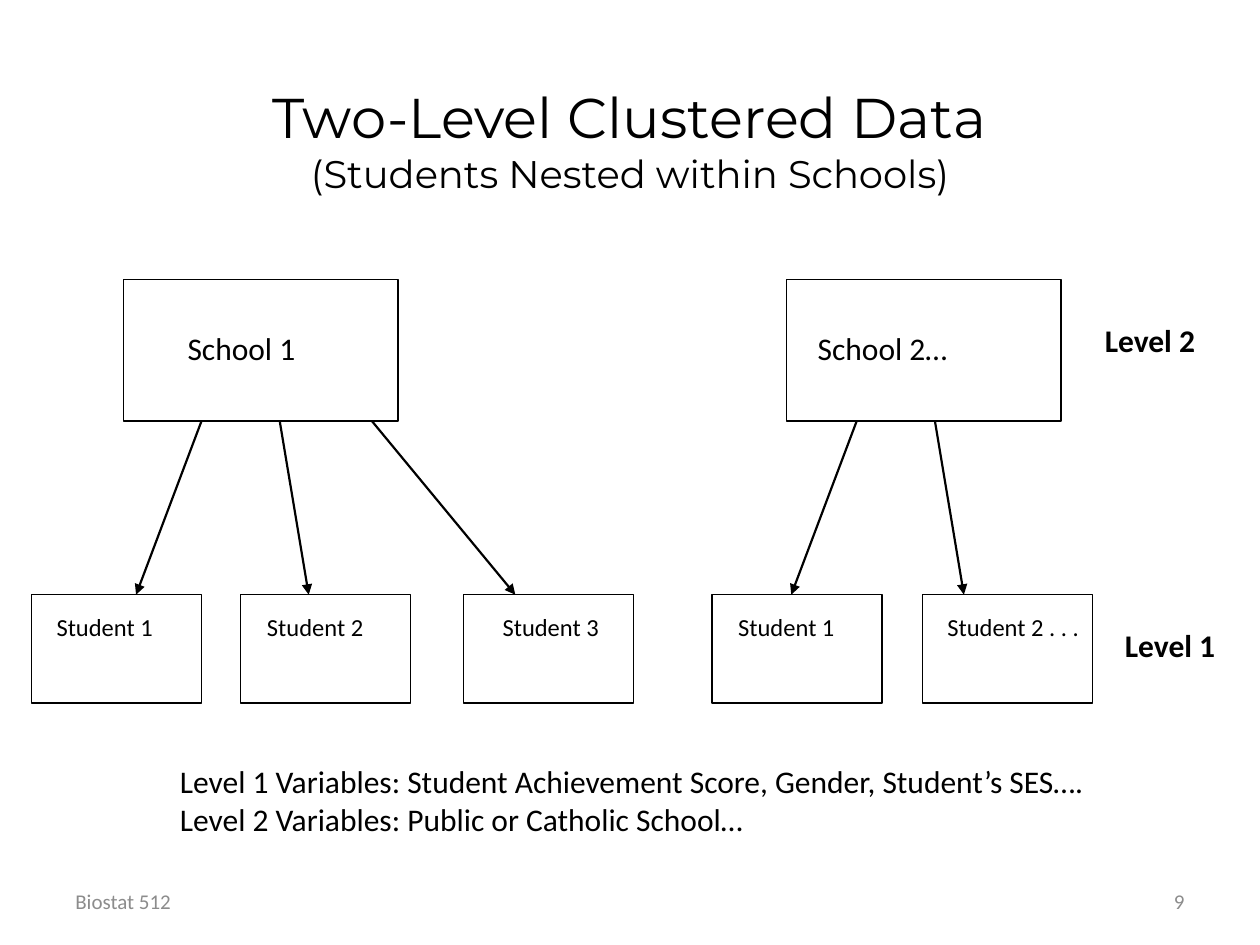
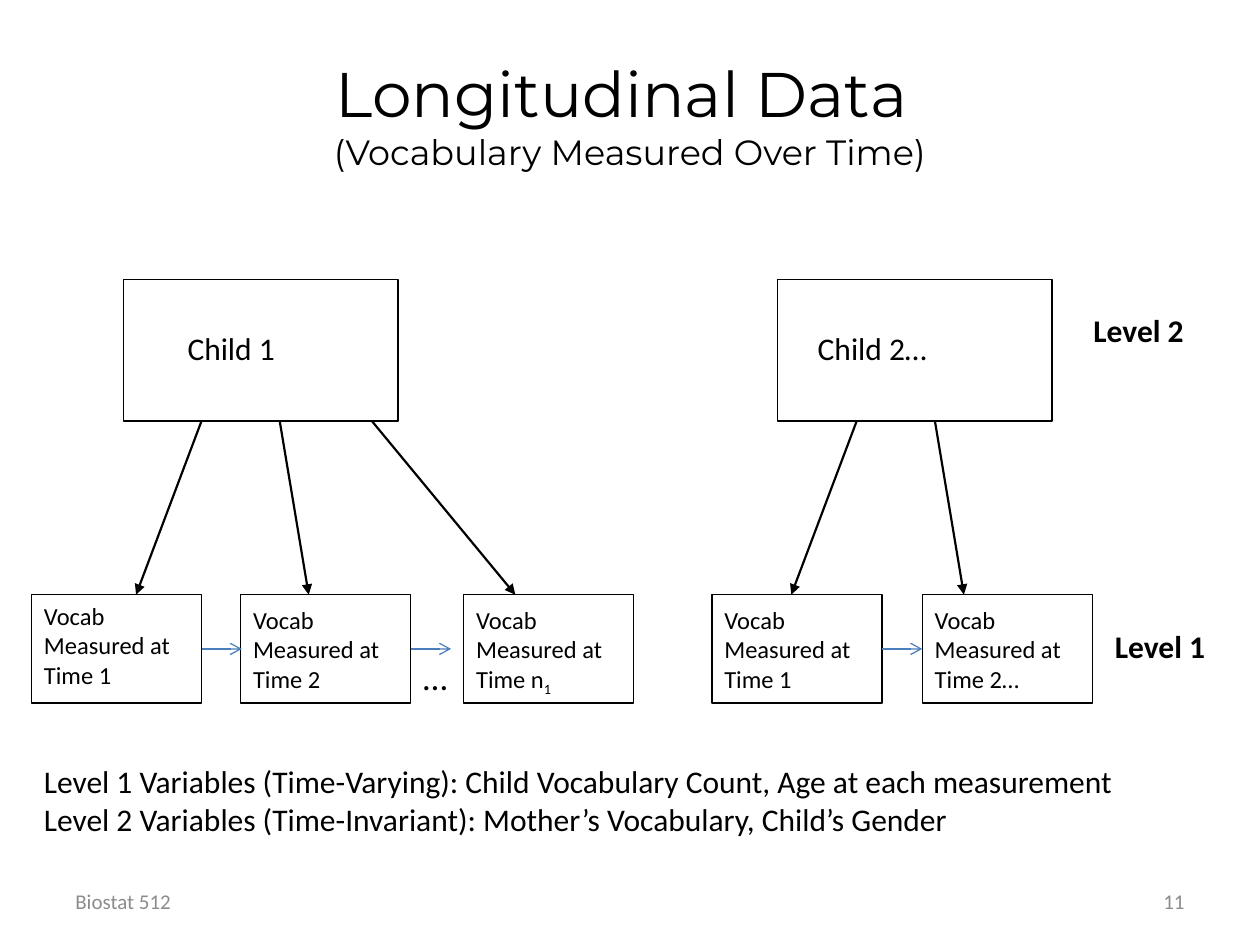
from dataclasses import dataclass

from lxml import etree
from pptx import Presentation
from pptx.dml.color import RGBColor
from pptx.enum.shapes import MSO_CONNECTOR, MSO_SHAPE
from pptx.enum.text import MSO_ANCHOR, MSO_AUTO_SIZE, PP_ALIGN
from pptx.oxml.ns import qn
from pptx.util import Inches, Pt

STRAIGHT = MSO_CONNECTOR.STRAIGHT
PROCESS = MSO_SHAPE.FLOWCHART_PROCESS
TOP, MIDDLE = MSO_ANCHOR.TOP, MSO_ANCHOR.MIDDLE
LEFT, CENTER, RIGHT = PP_ALIGN.LEFT, PP_ALIGN.CENTER, PP_ALIGN.RIGHT
GROW, FIXED = MSO_AUTO_SIZE.SHAPE_TO_FIT_TEXT, MSO_AUTO_SIZE.NONE

COLUMNS, ROWS = 10, 7.5
TITLE_ONLY = 5


@dataclass(frozen=True)
class Theme:
    ink: RGBColor = RGBColor(0x00, 0x00, 0x00)
    muted: RGBColor = RGBColor(0x8C, 0x8C, 0x8C)
    accent: RGBColor = RGBColor(0x4B, 0x7E, 0xBC)
    title_font: str = "Montserrat"
    body_font: str = "Calibri"
    body: int = 18
    small: int = 14
    dots: int = 20
    footer: int = 12
    thin: float = 0.75
    thick: float = 1.25


class Page:
    """Holds the style and the current slide; lengths are grid columns and rows."""

    def __init__(self, deck, theme):
        self.deck, self.theme = deck, theme
        self.slide = None

    def start(self):
        self.slide = self.deck.slides.add_slide(self.deck.slide_layouts[TITLE_ONLY])

    def across(self, columns):
        return round(self.deck.slide_width * columns / COLUMNS)

    def down(self, rows):
        return round(self.deck.slide_height * rows / ROWS)

    def area(self, left, top, width, height):
        return self.across(left), self.down(top), self.across(width), self.down(height)

    def span(self, para, words, size, color=None, font=None, bold=False):
        run = para.add_run()
        run.text = words
        run.font.size = Pt(size)
        run.font.name = font or self.theme.body_font
        run.font.color.rgb = color or self.theme.ink
        run.font.bold = bold
        return run

    def title(self, place, heading, heading_size, subtitle, subtitle_size):
        box = self.slide.shapes.title
        box.left, box.top, box.width, box.height = self.area(*place)
        box.text_frame.vertical_anchor = MIDDLE
        para = box.text_frame.paragraphs[0]
        para.alignment = CENTER
        self.span(para, heading, heading_size, font=self.theme.title_font)
        para.add_line_break()
        self.span(para, subtitle, subtitle_size, font=self.theme.title_font)

    def text(self, place, lines, size, color=None, bold=False, align=LEFT,
             anchor=TOP, fit=GROW, inset=0.1):
        box = self.slide.shapes.add_textbox(*self.area(*place))
        frame = box.text_frame
        frame.word_wrap = True
        frame.auto_size = fit
        frame.vertical_anchor = anchor
        frame.margin_left = self.across(inset)
        for index, words in enumerate(lines):
            para = frame.add_paragraph() if index else frame.paragraphs[0]
            para.alignment = align
            self.span(para, words, size, color, bold=bold)
        return frame

    def subscript(self, frame, words, size):
        run = self.span(frame.paragraphs[-1], words, size)
        run.font._element.set("baseline", "-25000")

    def outline(self, place):
        box = self.slide.shapes.add_shape(PROCESS, *self.area(*place))
        box.shadow.inherit = False
        box.fill.background()
        box.line.color.rgb = self.theme.ink
        box.line.width = Pt(self.theme.thin)

    def arrow(self, start, end, color, width, head):
        line = self.slide.shapes.add_connector(
            STRAIGHT, self.across(start[0]), self.down(start[1]),
            self.across(end[0]), self.down(end[1]))
        line.line.color.rgb = color
        line.line.width = Pt(width)
        etree.SubElement(line.line._get_or_add_ln(), qn("a:tailEnd"), type=head)
        etree.SubElement(line._element.spPr, qn("a:effectLst"))

    def footer(self, number):
        for left, words, align in ((0.5, "Biostat 512", LEFT), (7.17, number, RIGHT)):
            self.text((left, 6.95, 2.33, 0.4), [words], self.theme.footer,
                      self.theme.muted, align=align, anchor=MIDDLE, fit=FIXED)


# Shared tree geometry
PARENT_TOP, PARENT_WIDTH, PARENT_HEIGHT = 2.22, 2.18, 1.12
PARENT_BOTTOM = PARENT_TOP + PARENT_HEIGHT
FIRST_PARENT = 0.98
UNIT_TOP, UNIT_WIDTH, UNIT_HEIGHT = 4.72, 1.35, 0.86
UNIT_LEFTS = (0.25, 1.91, 3.68, 5.65, 7.32)
UNIT_MIDDLE = UNIT_TOP + UNIT_HEIGHT / 2
BRANCHES = ((1.6, 1.08), (2.22, 2.45), (2.95, 4.09), (6.8, 6.28), (7.42, 7.65))


def draw_tree(page, second_parent, parent_names):
    theme = page.theme
    for left in (FIRST_PARENT, second_parent):
        page.outline((left, PARENT_TOP, PARENT_WIDTH, PARENT_HEIGHT))
    for left in UNIT_LEFTS:
        page.outline((left, UNIT_TOP, UNIT_WIDTH, UNIT_HEIGHT))
    for start, end in BRANCHES:
        page.arrow((start, PARENT_BOTTOM), (end, UNIT_TOP),
                   theme.ink, theme.thick, "triangle")
    for left, name, inset in zip((1.39, 6.17), parent_names, (0.1, 0.32)):
        page.text((left, 2.56, 2, 0.42), [name], theme.body, inset=inset)


def draw_levels(page, places):
    for name, (left, top) in zip(("Level 2", "Level 1"), places):
        page.text((left, top, 1, 0.4), [name], page.theme.body, bold=True)


def draw_units(page, labels):
    """Write the unit labels and return their text frames."""
    return [page.text((left, top, 1.28, height), lines, page.theme.small)
            for left, top, height, lines in labels]


def clustered_slide(page):
    page.start()
    page.title((0, 0.25, 10, 1.71), "Two-Level Clustered Data", 32,
               "(Students Nested within Schools)", 22)
    draw_tree(page, 6.24, ("School 1", "School 2…"))
    names = ("Student 1", "Student 2", "Student 3", "Student 1", "Student 2 . . .")
    lefts = (0.35, 2.02, 3.89, 5.76, 7.42)
    draw_units(page, [(left, 4.81, 0.35, [name]) for left, name in zip(lefts, names)])
    draw_levels(page, ((8.67, 2.5), (8.83, 4.92)))
    page.text((1.33, 6, 7.75, 0.71), [
        "Level 1 Variables: Student Achievement Score, Gender, Student’s SES….",
        "Level 2 Variables: Public or Catholic School…"], page.theme.body)
    page.footer("9")


def longitudinal_slide(page):
    theme = page.theme
    page.start()
    page.title((0.25, 0.25, 9.5, 1.3), "Longitudinal Data ", 36,
               "(Vocabulary Measured Over Time)", 20)
    draw_tree(page, 6.17, ("Child 1", "Child 2…"))
    times = ("Time 1", "Time 2", "Time n", "Time 1", "Time 2…")
    tops = (UNIT_TOP, 4.75, 4.75, 4.75, 4.75)
    frames = draw_units(page, [
        (left, top, 0.81, [f"Vocab Measured at {time}"])
        for left, top, time in zip(UNIT_LEFTS, tops, times)])
    page.subscript(frames[2], "1", theme.small)
    page.text((3.26, 5.15, 0.62, 0.45), ["…"], theme.dots)
    draw_levels(page, ((8.58, 2.42), (8.75, 4.93)))
    page.text((0.25, 6, 9.5, 0.71), [
        "Level 1 Variables (Time-Varying): Child Vocabulary Count, Age at each measurement",
        "Level 2 Variables (Time-Invariant): Mother’s Vocabulary, Child’s Gender"],
        theme.body)
    # Arrows from one time to the next
    for unit in (0, 1, 3):
        start = UNIT_LEFTS[unit] + UNIT_WIDTH
        page.arrow((start, UNIT_MIDDLE), (start + 0.32, UNIT_MIDDLE),
                   theme.accent, theme.thin, "arrow")
    page.footer("11")


def main():
    deck = Presentation()
    deck.slide_width, deck.slide_height = Inches(10), Inches(7.5)
    page = Page(deck, Theme())
    clustered_slide(page)
    longitudinal_slide(page)
    deck.save("out.pptx")


if __name__ == "__main__":
    main()
